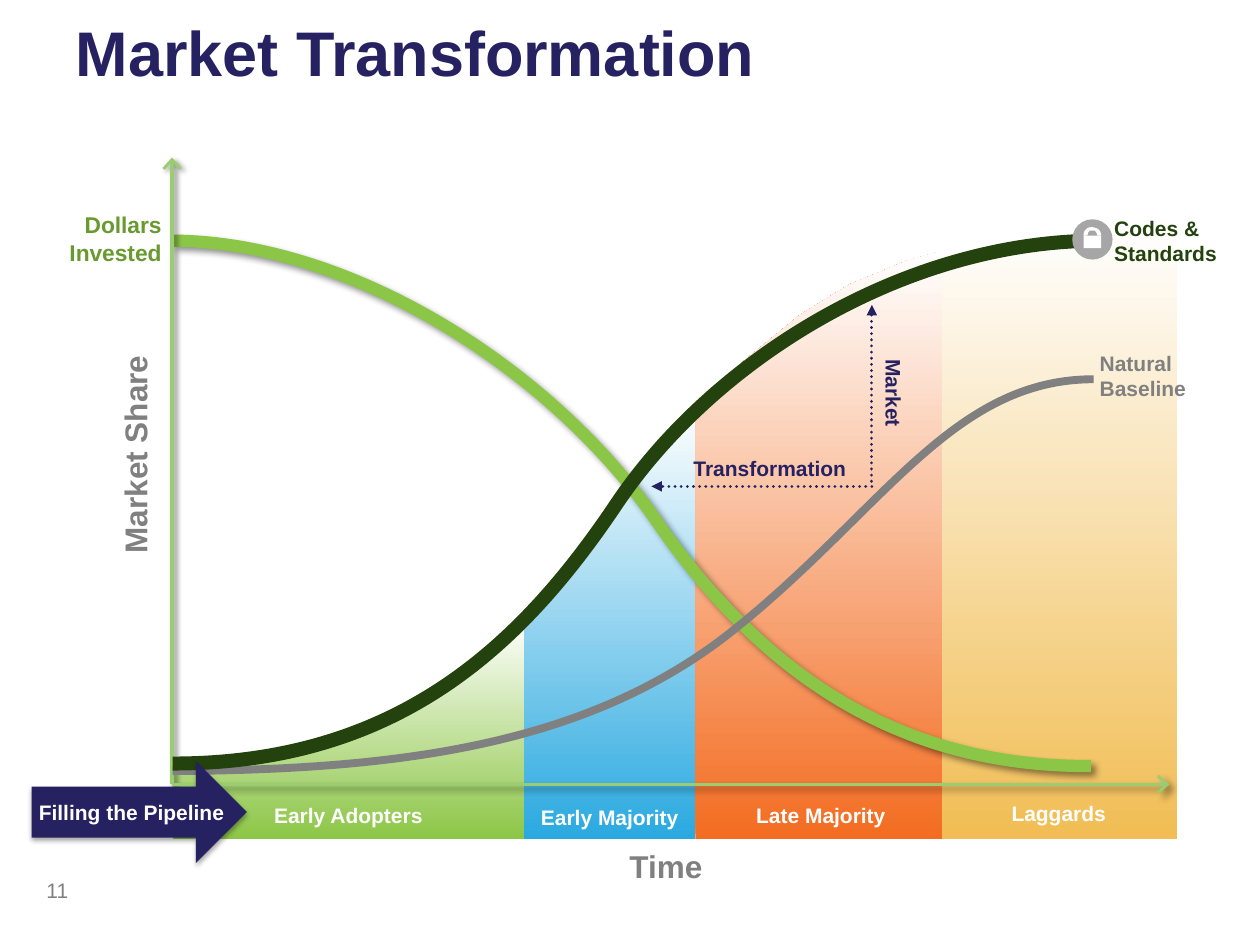
from dataclasses import dataclass
from typing import Optional

from lxml import etree
from pptx import Presentation
from pptx import util as u
from pptx.dml.color import RGBColor
from pptx.enum import dml, shapes, text
from pptx.oxml.ns import qn

NAVY = RGBColor(0x26, 0x22, 0x62)
GRAY = RGBColor(0x80, 0x80, 0x80)
LOCK_GRAY = RGBColor(0xA6, 0xA6, 0xA6)
WHITE = RGBColor(0xFF, 0xFF, 0xFF)
BLACK = RGBColor(0, 0, 0)
LIME = RGBColor(0x8C, 0xC6, 0x46)
AXIS_GREEN = RGBColor(0x9A, 0xCD, 0x72)
TEXT_GREEN = RGBColor(0x69, 0x9A, 0x2F)
FOREST = RGBColor(0x24, 0x42, 0x0E)
BLUE = RGBColor(0x2A, 0xA9, 0xE0)
ORANGE = RGBColor(0xF3, 0x6C, 0x21)
GOLD = RGBColor(0xF1, 0xBD, 0x54)

WIDTH, HEIGHT = u.Inches(10), u.Inches(7.5)
COLUMNS, ROWS = 100, 75
LEFT, CENTER, RIGHT = text.PP_ALIGN.LEFT, text.PP_ALIGN.CENTER, text.PP_ALIGN.RIGHT
AXIS_X, AXIS_Y = 13.65, 62.25
BAND_BOTTOM = 66.62


@dataclass(frozen=True)
class Shadow:
    alpha: int
    blur: float
    distance: float
    angle: int


@dataclass(frozen=True)
class Band:
    color: RGBColor
    left: float
    right: float
    top: tuple


@dataclass(frozen=True)
class Curve:
    color: RGBColor
    weight: float
    nodes: tuple
    shadow: Optional[Shadow] = None


@dataclass(frozen=True)
class Arrow:
    start: tuple
    end: tuple
    color: RGBColor
    weight: float
    head: dict
    dash: Optional[dml.MSO_LINE] = None
    shadow: Optional[Shadow] = None


@dataclass(frozen=True)
class Label:
    words: str
    box: tuple
    color: RGBColor
    size: float = 12
    align: text.PP_ALIGN = LEFT
    rotation: int = 0
    bold: bool = True
    wrap: bool = True
    spacing: float = 1.0
    fill: Optional[RGBColor] = None


CURVE_SHADOW = Shadow(43, 4, 3, 45)
AXIS_SHADOW = Shadow(43, 3, 2, 45)
ARROW_SHADOW = Shadow(35, 3.1, 1.8, 90)
OPEN_HEAD = {"type": "arrow", "w": "lg", "len": "med"}
SOLID_HEAD = {"type": "triangle"}
DOTS = dml.MSO_LINE.ROUND_DOT

BANDS = (
    Band(GOLD, 74.7, 93.4, ((74.4, 21.3), (78.3, 20.1), (82.5, 19.4), (86.4, 19.2),
                            (91.4, 18), (93.4, 17.9))),
    Band(LIME, 13.7, 41.7, ((13.8, 60.5), (17.3, 60.5), (21.9, 59.9), (26.3, 58.9),
                            (30.4, 57.3), (35.6, 54.4), (37.8, 52.9), (41.8, 49.1))),
    Band(BLUE, 41.6, 55.2, ((41.6, 49.1), (45.8, 44.2), (48.1, 40.6), (51.1, 36.8),
                            (55.2, 32.3))),
    Band(ORANGE, 55.2, 74.8, ((55.2, 32.3), (59.1, 28.6), (63.5, 25), (67.4, 22.6),
                              (72, 20.7), (74.8, 19.9))),
)
DOLLARS = Curve(LIME, 7, ((13.7, 19.1), (28.1, 19.2), (43.9, 29.5), (52, 41.2),
                          (60.1, 53), (70.9, 60.9), (86.6, 60.8)), CURVE_SHADOW)
BASELINE = Curve(GRAY, 4.5, ((13.7, 61.2), (31.7, 61.1), (47, 59.2), (58.6, 49.7),
                             (70.2, 40.3), (75.7, 30.1), (86.8, 30.1)))
STANDARDS = Curve(FOREST, 8, ((13.7, 60.6), (31.7, 60.6), (41.5, 51.1), (49, 39.9),
                              (56.5, 28.8), (71.4, 19.2), (87.1, 19.1)))
OUTER_ARC = ((86, 18.7), (86, 18.4), (86.1, 18.2), (86.3, 18.1), (86.6, 18), (86.8, 18),
             (87, 18.1), (87.3, 18.2), (87.4, 18.5), (87.4, 18.7))
INNER_ARC = ((87.1, 18.7), (87.1, 18.6), (87, 18.4), (86.9, 18.3), (86.8, 18.3),
             (86.6, 18.3), (86.5, 18.3), (86.4, 18.4), (86.3, 18.5), (86.3, 18.7))
GAPS = (
    Arrow((69.2, 38.6), (51.7, 38.6), NAVY, 1.75, SOLID_HEAD, DOTS),
    Arrow((69.2, 38.2), (69.2, 24.2), NAVY, 1.75, SOLID_HEAD, DOTS),
)
AXES = (
    Arrow((AXIS_X, AXIS_Y), (AXIS_X, 12.5), AXIS_GREEN, 2, OPEN_HEAD, None, AXIS_SHADOW),
    Arrow((AXIS_X, AXIS_Y), (92.8, AXIS_Y), AXIS_GREEN, 2, OPEN_HEAD, None, CURVE_SHADOW),
)
INVESTED = Label("Dollars Invested", (2.1, 16.25, 11.7, 5.4), TEXT_GREEN, 13, RIGHT, fill=WHITE)
LABELS = (
    Label("11", (2.7, 69.15, 20.8, 3.3), GRAY, bold=False),
    Label("Market Share", (1.7, 33.9, 18, 4), GRAY, 18, rotation=270),
    Label("Time", (41.8, 66.7, 22.1, 4), GRAY, 18, CENTER),
    Label("Transformation", (52, 35.7, 18.2, 3), NAVY, align=CENTER),
    Label("Market", (61.9, 29.7, 18.1, 3), NAVY, align=CENTER, rotation=90),
    Label("Natural Baseline", (86.3, 27.3, 10.6, 5), GRAY),
    Label("Codes & Standards", (87.45, 16.6, 11.4, 5), FOREST),
    Label("Early Majority", (41.6, 63.6, 13.6, 2.9), WHITE, align=CENTER, spacing=0.9),
    Label("Late Majority", (55.2, 63.2, 19.9, 3), WHITE, align=CENTER),
    Label("Early Adopters", (13.7, 63.2, 27.9, 3), WHITE, align=CENTER),
    Label("Laggards", (79.3, 63.05, 9.6, 3), WHITE, wrap=False),
)
PIPELINE = Label("Filling the Pipeline", (2.1, 63, 19.8, 3), WHITE)


def across(column: float) -> int:
    return round(WIDTH * column / COLUMNS)


def down(row: float) -> int:
    return round(HEIGHT * row / ROWS)


def place(box: tuple) -> tuple:
    left, top, width, height = box
    return across(left), down(top), across(width), down(height)


def apply_format(target, values: dict) -> None:
    for name, value in values.items():
        setattr(target, name, value)


def set_effect(shape, shadow: Optional[Shadow]) -> None:
    effects = etree.SubElement(shape._element.spPr, qn("a:effectLst"))
    if shadow:
        outer = etree.SubElement(effects, qn("a:outerShdw"), {
            "blurRad": str(u.Pt(shadow.blur)), "dist": str(u.Pt(shadow.distance)),
            "dir": str(shadow.angle * 60000), "rotWithShape": "0"})
        color = etree.SubElement(outer, qn("a:srgbClr"), val=str(BLACK))
        etree.SubElement(color, qn("a:alpha"), val=str(shadow.alpha * 1000))


def paint(shape, color: RGBColor, shadow: Optional[Shadow] = None) -> None:
    shape.fill.solid()
    shape.fill.fore_color.rgb = color
    shape.line.fill.background()
    set_effect(shape, shadow)


def outline(slide, points: tuple, close: bool):
    start, *rest = [(across(x), down(y)) for x, y in points]
    builder = slide.shapes.build_freeform(*start)
    builder.add_line_segments(rest, close=close)
    return builder.convert_to_shape()


def bend(shape, starts: list) -> None:
    lines = list(shape._element.iter(qn("a:lnTo")))
    for start in starts:
        first, *others = lines[start:start + 3]
        first.tag = qn("a:cubicBezTo")
        for line in others:
            first.append(line[0])
            line.getparent().remove(line)


def draw_band(slide, band: Band) -> None:
    corners = ((band.right, BAND_BOTTOM), (band.left, BAND_BOTTOM))
    shape = outline(slide, band.top + corners, True)
    shape.fill.gradient()
    shape.fill.gradient_angle = 90
    for stop, color, position in zip(shape.fill.gradient_stops, (band.color, WHITE), (0, 1)):
        stop.color.rgb = color
        stop.position = position
    shape.line.fill.background()
    set_effect(shape, None)


def draw_curve(slide, curve: Curve) -> None:
    shape = outline(slide, curve.nodes, False)
    bend(shape, [0, 3])
    shape.fill.background()
    shape.line.color.rgb = curve.color
    shape.line.width = u.Pt(curve.weight)
    set_effect(shape, curve.shadow)


def draw_arrow(slide, arrow: Arrow) -> None:
    (x1, y1), (x2, y2) = arrow.start, arrow.end
    connector = slide.shapes.add_connector(
        shapes.MSO_CONNECTOR.STRAIGHT, across(x1), down(y1), across(x2), down(y2))
    connector.line.color.rgb = arrow.color
    apply_format(connector.line, {"width": u.Pt(arrow.weight), "dash_style": arrow.dash})
    line = connector.line._get_or_add_ln()
    if arrow.dash:
        line.set("cap", "rnd")
    etree.SubElement(line, qn("a:tailEnd"), arrow.head)
    set_effect(connector, arrow.shadow)


def write(paragraph, words: str, color: RGBColor, values: dict) -> None:
    run = paragraph.add_run()
    run.text = words
    apply_format(run.font, {"name": "Arial", **values})
    run.font.color.rgb = color


def draw_label(slide, label: Label) -> None:
    shape = slide.shapes.add_textbox(*place(label.box))
    shape.rotation = label.rotation
    if label.fill is not None:
        paint(shape, label.fill)
    shape.text_frame.word_wrap = label.wrap
    paragraph = shape.text_frame.paragraphs[0]
    apply_format(paragraph, {"alignment": label.align, "line_spacing": label.spacing})
    write(paragraph, label.words, label.color, {"size": u.Pt(label.size), "bold": label.bold})


def draw_title(slide, words: str) -> None:
    title = slide.shapes.title
    apply_format(title, dict(zip(("left", "top", "width", "height"), place((5, 0, 91.6, 8.2)))))
    apply_format(title.text_frame, {
        "margin_left": u.Inches(0.1), "margin_top": u.Inches(0.05), "margin_right": 0,
        "margin_bottom": u.Inches(0.05), "vertical_anchor": text.MSO_ANCHOR.MIDDLE,
        "word_wrap": True, "auto_size": text.MSO_AUTO_SIZE.NONE})
    paragraph = title.text_frame.paragraphs[0]
    paragraph.alignment = LEFT
    write(paragraph, words, NAVY, {"size": u.Pt(36), "bold": True})
    slide.shapes._spTree.append(title._element)


def draw_preset(slide, kind, box: tuple, color: RGBColor, shadow=None) -> None:
    paint(slide.shapes.add_shape(kind, *place(box)), color, shadow)


def draw_lock(slide) -> None:
    draw_preset(slide, shapes.MSO_SHAPE.OVAL, (85.1, 17.4, 3.2, 3.2), LOCK_GRAY)
    draw_preset(slide, shapes.MSO_SHAPE.RECTANGLE, (86, 18.7, 1.4, 1), WHITE)
    shackle = outline(slide, OUTER_ARC + INNER_ARC, True)
    bend(shackle, [0, 3, 6, 10, 13, 16])
    paint(shackle, WHITE)


def main() -> None:
    presentation = Presentation()
    apply_format(presentation, {"slide_width": WIDTH, "slide_height": HEIGHT})
    slide = presentation.slides.add_slide(presentation.slide_layouts[5])
    draw_preset(slide, shapes.MSO_SHAPE.RECTANGLE, (0, 0, COLUMNS, ROWS), WHITE, ARROW_SHADOW)
    for band in BANDS:
        draw_band(slide, band)
    for gap in GAPS:
        draw_arrow(slide, gap)
    draw_curve(slide, DOLLARS)
    draw_label(slide, INVESTED)
    for axis in AXES:
        draw_arrow(slide, axis)
    draw_title(slide, "Market Transformation")
    for curve in (BASELINE, STANDARDS):
        draw_curve(slide, curve)
    for label in LABELS:
        draw_label(slide, label)
    draw_lock(slide)
    draw_preset(slide, shapes.MSO_SHAPE.RIGHT_ARROW, (2.5, 60.4, 17.1, 8.1), NAVY, ARROW_SHADOW)
    draw_label(slide, PIPELINE)
    presentation.save("out.pptx")


if __name__ == "__main__":
    main()
